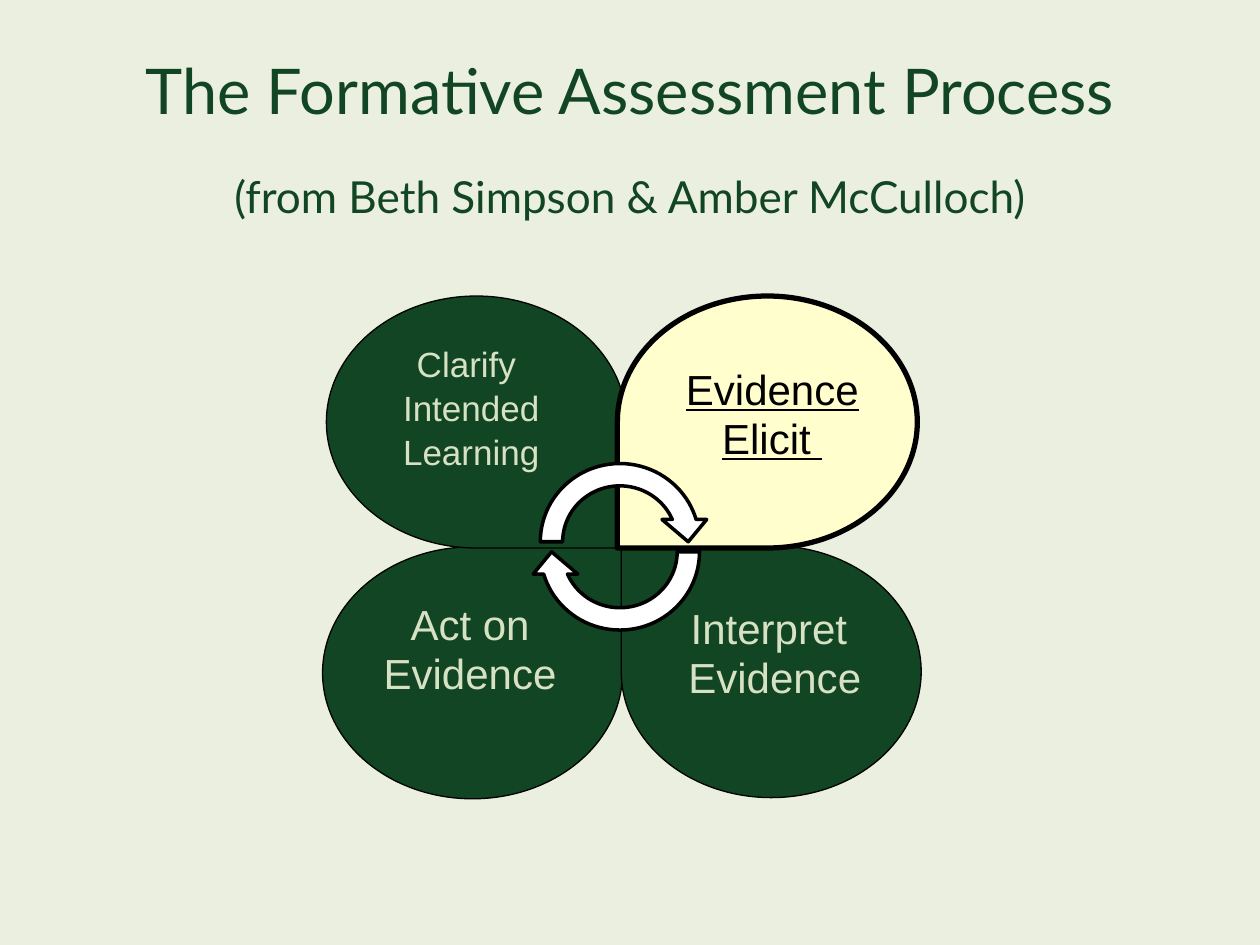
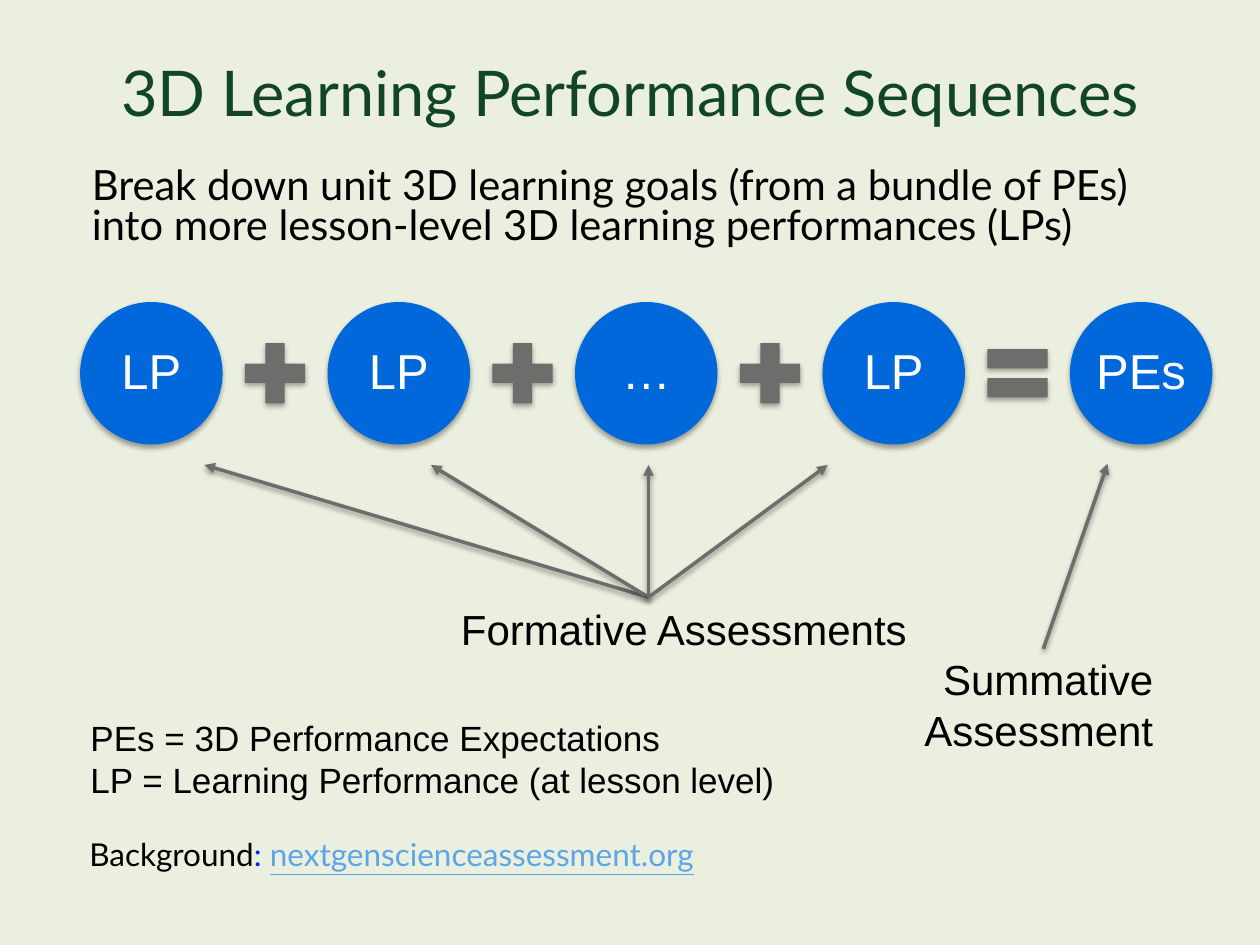
from lxml.etree import SubElement
from pptx import Presentation
from pptx.dml.color import RGBColor
from pptx.enum.shapes import MSO_CONNECTOR, MSO_SHAPE as SHAPE
from pptx.enum.text import MSO_ANCHOR as ANCHOR, MSO_AUTO_SIZE, PP_ALIGN as ALIGN
from pptx.oxml.ns import qn
from pptx.util import Pt

# Shared look
PAPER, GREEN, SAGE, CREAM = "EBEFDF", "114523", "D7E1C3", "FFFECC"
BLUE, GREY, BLACK, WHITE = "0068DA", "6B6E6B", "000000", "FFFFFF"
COLON, LINK = "0020FF", "5DA5E6"
HEAD, BODY = "Lato", "Arial"

# Slide 1: the four petals of the process
PROCESS_TITLE = [("The Formative Assessment Process", 36),
                 ("(from Beth Simpson & Amber McCulloch)", 25.2)]
PETAL_SIZE = (171.4, 144)
PETALS = [  # left, top, flips, fill, line width
    (184.3, 312.5, "", GREEN, 0.75),
    (186.5, 169.2, "V", GREEN, 0.75),
    (355, 311.8, "H", GREEN, 0.75),
    (352.8, 169.2, "HV", CREAM, 3),
]
CYCLE_ARROWS = [(258.5, 0), (264.2, 180)]  # top, rotation
PETAL_LABELS = [  # lines, box, size, colour, indent
    (["Clarify ", "Intended", "Learning"], (148.3, 199.8, 242, 124), 20, SAGE, 0),
    (["Act on", "Evidence"], (148.3, 348.1, 232, 128), 24, SAGE, 8.64),
    (["Evidence", "Elicit "], (334.8, 213.5, 204.5, 78), 24, BLACK, 8.64),
    (["Interpret ", "Evidence"], (343.4, 350.3, 190, 134), 24, SAGE, 8.64),
]

# Slide 2: the sum of learning performances
SEQUENCE_TITLE = [("3D Learning Performance Sequences", 36)]
INTRO = ("Break down unit 3D learning goals (from a bundle of PEs) "
         "into more lesson-level 3D learning performances (LPs)")
CIRCLES = ["LP", "LP", "…", "LP", "PEs"]
OPERATORS = [SHAPE.MATH_PLUS] * 3 + [SHAPE.MATH_EQUAL]
CIRCLE_LEFT, CIRCLE_TOP, CIRCLE, PITCH, OPERATOR = 45.8, 172.6, 81.4, 141.4, 46.8
ARROWS = [((370.6, 341.3), (x, 265.7)) for x in (116.8, 246.3, 370.6, 473)]
ARROWS.append(((596.2, 370.8), (632.9, 265)))
GLOSSARY = ["PEs = 3D Performance Expectations",
            "LP = Learning Performance (at lesson level)"]
BACKGROUND = [("Background", BLACK), (": ", COLON),
              ("nextgenscienceassessment.org", LINK)]


def rgb(color):
    return RGBColor.from_string(color)


def style(font, size, color, name=BODY):
    font.size, font.name = Pt(size), name
    font.color.rgb = rgb(color)


def place(sp, box):
    sp.left, sp.top, sp.width, sp.height = map(Pt, box)


def add_slide(title, top):
    """Title-only slide; later title lines stand apart from the first."""
    s = prs.slides.add_slide(prs.slide_layouts[5])
    place(s.shapes.title, (49.7, top, 620.6, 104.4))
    tf = s.shapes.title.text_frame
    tf.auto_size, tf.vertical_anchor = MSO_AUTO_SIZE.NONE, ANCHOR.MIDDLE
    tf.text = "\n".join(text for text, size in title)
    for i, (p, (text, size)) in enumerate(zip(tf.paragraphs, title)):
        p.alignment, p.line_spacing = ALIGN.CENTER, 0.9
        p.space_before = Pt(27 if i else 0)
        style(p.runs[0].font, size, GREEN, HEAD)
    return s


def add_text(s, lines, box, size, color=BLACK, name=BODY, align=ALIGN.LEFT,
             spacing=1.0, gap=0, indent=0):
    tf = s.shapes.add_textbox(*map(Pt, box)).text_frame
    tf.word_wrap = True
    tf.text = "\n".join(lines)
    for i, p in enumerate(tf.paragraphs):
        p._p.get_or_add_pPr().set("marL", str(Pt(indent)))
        p.alignment, p.line_spacing = align, spacing
        p.space_before = Pt(gap if i else 0)
        for r in p.runs:
            style(r.font, size, color, name)
    return tf


def add_shape(s, kind, box, fill, line=0):
    sp = s.shapes.add_shape(kind, *map(Pt, box))
    sp.fill.solid()
    sp.fill.fore_color.rgb = rgb(fill)
    if line:
        sp.line.width = Pt(line)
        sp.line.color.rgb = rgb(BLACK)
    else:
        sp.line.fill.background()
    sp.shadow.inherit = False
    return sp


def add_shadow(sp, alpha, distance):
    spPr = sp._element.spPr
    effects = spPr.find(qn("a:effectLst"))
    if effects is None:
        effects = SubElement(spPr, qn("a:effectLst"))
    shadow = SubElement(effects, qn("a:outerShdw"), blurRad=str(Pt(3.1)),
                        dist=str(Pt(distance)), dir="5400000", rotWithShape="0")
    color = SubElement(shadow, qn("a:srgbClr"), val=BLACK)
    SubElement(color, qn("a:alpha"), val=str(alpha * 1000))


def add_arrow(s, start, end):
    c = s.shapes.add_connector(MSO_CONNECTOR.STRAIGHT, *map(Pt, start + end))
    c.line.width = Pt(2)
    c.line.color.rgb = rgb(GREY)
    SubElement(c.line._get_or_add_ln(), qn("a:tailEnd"), type="triangle")
    add_shadow(c, 38, 1.6)


def build_process():
    s = add_slide(PROCESS_TITLE, 28.8)
    # Petals and the cycle in their middle
    for left, top, flips, fill, line in PETALS:
        sp = add_shape(s, SHAPE.TEAR, (left, top) + PETAL_SIZE, fill, line)
        for axis in flips:
            sp._element.spPr.xfrm.set("flip" + axis, "1")
    for top, rotation in CYCLE_ARROWS:
        sp = add_shape(s, SHAPE.CIRCULAR_ARROW, (302.4, top, 103.7, 102.2), WHITE, 2)
        sp.rotation = rotation
    # Labels; the current step is underlined
    for lines, box, size, color, indent in PETAL_LABELS:
        tf = add_text(s, lines, box, size, color, align=ALIGN.CENTER,
                      spacing=0.63, gap=10, indent=indent)
        if color == BLACK:
            for p in tf.paragraphs:
                p.runs[0].font.underline = True


def build_sequence():
    s = add_slide(SEQUENCE_TITLE, 2.9)
    add_text(s, [INTRO], (45.4, 92.9, 625, 68.4), 23.8, name=HEAD, spacing=0.8)

    # Background line with differently coloured parts
    tf = add_text(s, [""], (35.3, 475.9, 517, 58.3), 18, spacing=0.9, indent=8.64)
    for text, color in BACKGROUND:
        r = tf.paragraphs[0].add_run()
        r.text = text
        style(r.font, 18, color, HEAD)
        r.font.underline = color == LINK
    add_text(s, GLOSSARY, (44.6, 406.1, 457.2, 55.4), 20)

    # Circles, with an operator centred in each gap
    inset = (CIRCLE - OPERATOR) / 2
    for i, label in enumerate(CIRCLES):
        left = CIRCLE_LEFT + i * PITCH
        sp = add_shape(s, SHAPE.OVAL, (left, CIRCLE_TOP, CIRCLE, CIRCLE), BLUE)
        add_shadow(sp, 35, 1.8)
        tf = sp.text_frame
        tf.margin_left = tf.margin_right = tf.margin_top = tf.margin_bottom = Pt(2.9)
        tf.vertical_anchor = ANCHOR.MIDDLE
        tf.text = label
        p = tf.paragraphs[0]
        p.alignment, p.line_spacing = ALIGN.CENTER, 0.9
        style(p.runs[0].font, 28, WHITE)
        if i < len(OPERATORS):
            x = left + (CIRCLE + PITCH - OPERATOR) / 2
            sp = add_shape(s, OPERATORS[i], (x, CIRCLE_TOP + inset, OPERATOR, OPERATOR), GREY)
            add_shadow(sp, 35, 1.8)

    # Assessments pointing at the circles
    tf = add_text(s, ["Formative Assessments"], (256.3, 341.3, 272.2, 36), 24)
    tf.word_wrap = False
    add_text(s, ["Summative Assessment"], (446.4, 370.1, 219.6, 65.5), 24,
             align=ALIGN.RIGHT)
    for start, end in ARROWS:
        add_arrow(s, start, end)


prs = Presentation()
prs.slide_width, prs.slide_height = Pt(720), Pt(540)
paper = prs.slide_master.background.fill
paper.solid()
paper.fore_color.rgb = rgb(PAPER)
build_process()
build_sequence()
prs.save("out.pptx")
